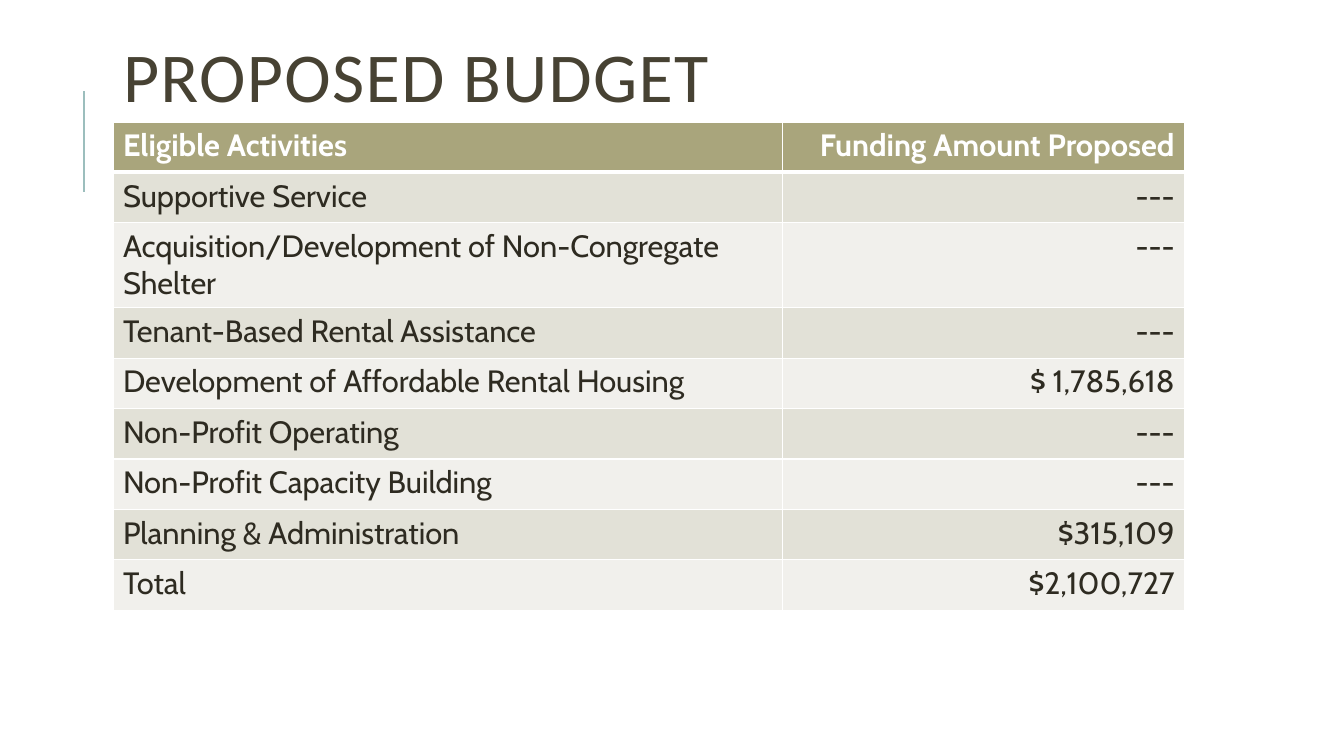
from lxml.etree import SubElement
from pptx import Presentation
from pptx.dml.color import RGBColor
from pptx.enum.shapes import MSO_CONNECTOR
from pptx.enum.text import MSO_ANCHOR, MSO_AUTO_SIZE, PP_ALIGN
from pptx.oxml import parse_xml
from pptx.oxml.ns import nsdecls, qn
from pptx.util import Inches, Pt

BUDGET = [
    ("Eligible Activities", "Funding Amount Proposed"),
    ("Supportive Service", "---"),
    ("Acquisition/Development of Non-Congregate Shelter", "---"),
    ("Tenant-Based Rental Assistance", "---"),
    ("Development of Affordable Rental Housing", "$ 1,785,618"),
    ("Non-Profit Operating", "---"),
    ("Non-Profit Capacity Building", "---"),
    ("Planning & Administration", "$315,109"),
    ("Total", "$2,100,727"),
]


def color(value):
    return RGBColor.from_string(value)


class BudgetSlide:
    title_font, body_font = "Calibri", "Cabin"
    title_color, text_color, white = "474233", "2E2B21", "FFFFFF"
    accent, header_fill, bands = "9CBEBD", "A9A57C", ("F1F0EC", "E2E1D7")

    def __init__(self, deck):
        self.page = deck.slides.add_slide(deck.slide_layouts[5])
        self.page.background.fill.solid()
        self.page.background.fill.fore_color.rgb = color(self.white)

    def style(self, paragraph, name, size, value, bold=False):
        font = paragraph.font
        font.name, font.size, font.bold = name, Pt(size), bold
        font.color.rgb = color(value)

    def title(self, text, left, top, width, height):
        box = self.page.shapes.title
        box.left, box.top = Inches(left), Inches(top)
        box.width, box.height = Inches(width), Inches(height)
        frame = box.text_frame
        frame.text = text
        frame.word_wrap = True
        frame.auto_size = MSO_AUTO_SIZE.NONE
        frame.vertical_anchor = MSO_ANCHOR.MIDDLE
        paragraph = frame.paragraphs[0]
        paragraph.alignment = PP_ALIGN.LEFT
        paragraph.line_spacing = 0.8
        self.style(paragraph, self.title_font, 50, self.title_color)
        # Letter spacing of one point
        for span in paragraph.runs:
            span.font._element.set("spc", "100")

    def line(self, start_x, start_y, end_x, end_y):
        rule = self.page.shapes.add_connector(
            MSO_CONNECTOR.STRAIGHT, Inches(start_x), Inches(start_y),
            Inches(end_x), Inches(end_y))
        rule.line.color.rgb = color(self.accent)
        rule.line.width = Pt(1.5)
        SubElement(rule._element.spPr, qn("a:effectLst"))

    def borders(self, cell, top, bottom):
        properties = cell._tc.get_or_add_tcPr()
        widths = {"lnL": 1, "lnR": 1, "lnT": top, "lnB": bottom}
        for position, (side, width) in enumerate(widths.items()):
            properties.insert(position, parse_xml(
                f'<a:{side} {nsdecls("a")} w="{Pt(width)}"><a:solidFill>'
                f'<a:srgbClr val="{self.white}"/></a:solidFill></a:{side}>'))

    def table(self, rows, left, top, column_widths, row_height):
        table = self.page.shapes.add_table(
            len(rows), len(column_widths), Inches(left), Inches(top),
            Inches(sum(column_widths)), Inches(row_height * len(rows))).table
        for column, width in zip(table.columns, column_widths):
            column.width = Inches(width)
        for row_index, row in enumerate(rows):
            header = row_index == 0
            fill = self.header_fill if header else self.bands[row_index % 2]
            for column_index, text in enumerate(row):
                cell = table.cell(row_index, column_index)
                cell.text = text
                cell.fill.solid()
                cell.fill.fore_color.rgb = color(fill)
                paragraph = cell.text_frame.paragraphs[0]
                paragraph.alignment = PP_ALIGN.RIGHT if column_index else PP_ALIGN.LEFT
                self.style(paragraph, self.body_font, 22,
                           self.white if header else self.text_color, header)
                self.borders(cell, 3 if row_index == 1 else 1, 3 if header else 1)


def main():
    deck = Presentation()
    deck.slide_width, deck.slide_height = Inches(13.33), Inches(7.5)
    slide = BudgetSlide(deck)

    # Accent line and heading
    slide.line(0.83, 1.9, 0.83, 0.9)
    slide.title("PROPOSED BUDGET", 1.12, 0, 10.63, 1.64)

    # Budget by activity
    slide.table(BUDGET, 1.12, 1.21, (6.64, 3.99), 0.5)

    deck.save("out.pptx")


if __name__ == "__main__":
    main()
